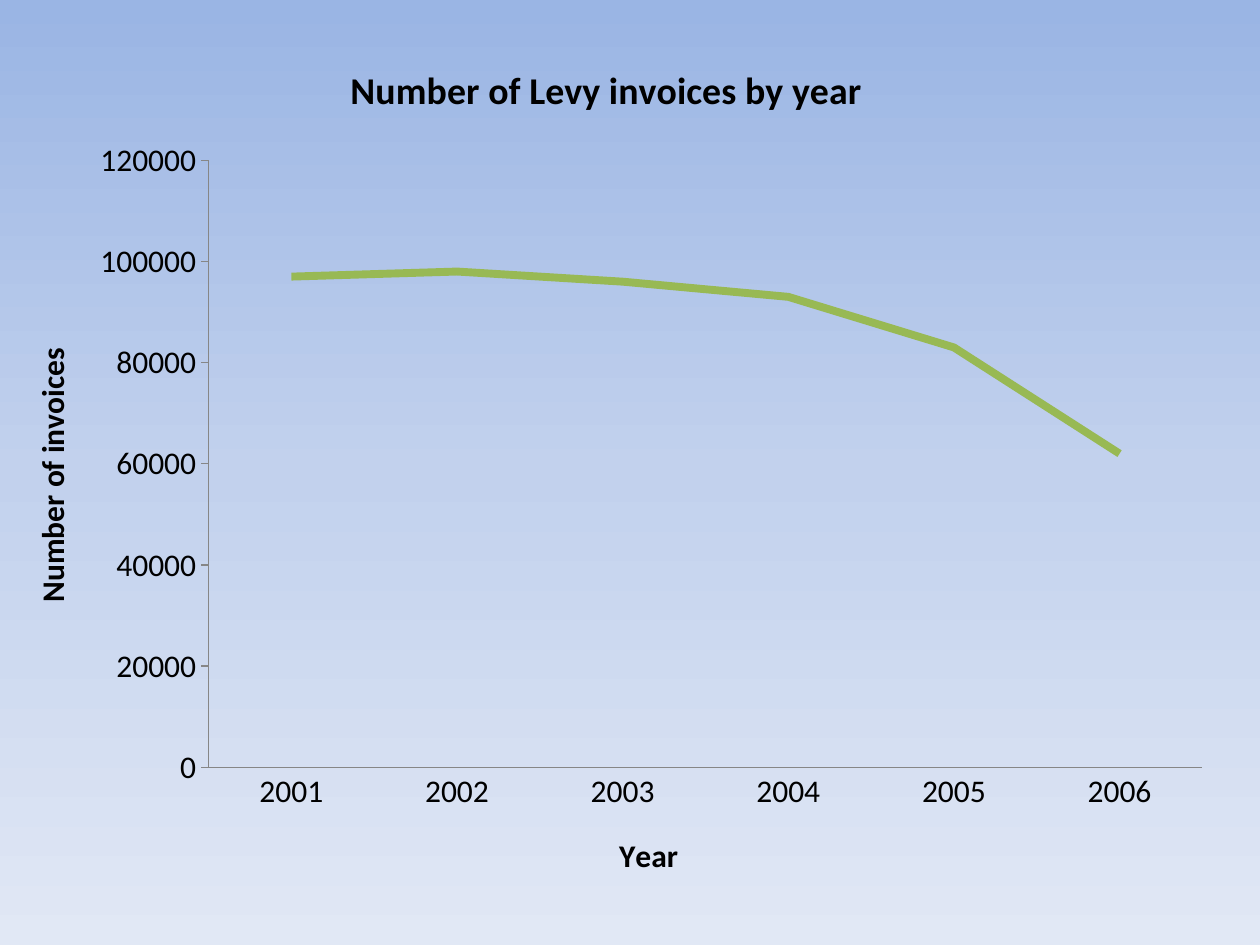
from copy import deepcopy

from lxml import etree
from pptx import Presentation
from pptx.chart.data import CategoryChartData
from pptx.dml.color import RGBColor
from pptx.enum.chart import XL_CHART_TYPE, XL_MARKER_STYLE, XL_TICK_MARK
from pptx.oxml.ns import qn
from pptx.util import Emu, Pt

LINE = XL_CHART_TYPE.LINE
NO_MARKER = XL_MARKER_STYLE.NONE
NO_TICK = XL_TICK_MARK.NONE
OUTSIDE_TICK = XL_TICK_MARK.OUTSIDE

EMU_PER_PX = 914400 / 126
BLANK_LAYOUT = 6


def px(length):
    """Turn pixels into EMU."""
    return Emu(round(length * EMU_PER_PX))


def color(value):
    """Turn a hex string into a colour."""
    return RGBColor.from_string(value)


def place(parent, index, **values):
    """Give a chart part a manual layout in fractions of the chart."""
    for previous in parent.findall(qn("c:layout")):
        parent.remove(previous)
    layout = etree.Element(qn("c:layout"))
    manual = etree.SubElement(layout, qn("c:manualLayout"))
    if "w" in values:
        etree.SubElement(manual, qn("c:layoutTarget")).set("val", "inner")
    for mode in ("xMode", "yMode"):
        etree.SubElement(manual, qn(f"c:{mode}")).set("val", "edge")
    for name, value in values.items():
        etree.SubElement(manual, qn(f"c:{name}")).set("val", str(value))
    parent.insert(index, layout)


class SlideBuilder:
    """Hold the style and the current slide."""

    font = "Calibri"
    text_color = "000000"
    axis_color = "868686"
    text_size = 18
    title_size = 21.6

    def __init__(self, slide):
        self.slide = slide

    def background(self, top, middle, bottom):
        """Fill the background with a vertical three-stop gradient."""
        fill = self.slide.background.fill
        fill.gradient()
        fill.gradient_angle = 270
        first = self.slide.element.find(".//" + qn("a:gs"))
        center = deepcopy(first)
        center.set("pos", "50000")
        first.addnext(center)
        for stop, value in zip(fill.gradient_stops, (top, middle, bottom)):
            stop.color.rgb = color(value)

    def style_font(self, font, size, bold):
        """Apply the slide's type style."""
        font.name = self.font
        font.size = Pt(size)
        font.bold = bold
        font.color.rgb = color(self.text_color)

    def chart_title(self, title, text, size, x, y, rotation=0):
        """Write and place a chart or axis title."""
        title.text_frame.text = text
        self.style_font(title.text_frame.paragraphs[0].font, size, True)
        title.element.find(".//" + qn("a:bodyPr")).set("rot", str(rotation * 60000))
        place(title.element, 1, x=x, y=y)

    def axis(self, axis, tick):
        """Style an axis without gridlines."""
        axis.has_major_gridlines = False
        axis.major_tick_mark = tick
        axis.minor_tick_mark = NO_TICK
        axis.format.line.color.rgb = color(self.axis_color)
        axis.format.line.width = Pt(0.75)

    def line_chart(self, left, top, width, height, categories, values, line_color):
        """Add a single-line chart."""
        data = CategoryChartData()
        data.categories = categories
        data.add_series("Series 1", values)
        frame = self.slide.shapes.add_chart(
            LINE, px(left), px(top), px(width), px(height), data
        )
        chart = frame.chart
        chart.has_legend = False
        self.style_font(chart.font, self.text_size, False)
        self.axis(chart.category_axis, NO_TICK)
        self.axis(chart.value_axis, OUTSIDE_TICK)
        plot = chart.plots[0]
        plot.vary_by_categories = False
        series = plot.series[0]
        series.smooth = False
        series.marker.style = NO_MARKER
        series.format.line.color.rgb = color(line_color)
        series.format.line.width = Pt(4.5)
        return chart


def main():
    """Build the invoice slide."""
    presentation = Presentation()
    presentation.slide_width = px(1260)
    presentation.slide_height = px(945)
    slide = presentation.slides.add_slide(presentation.slide_layouts[BLANK_LAYOUT])
    builder = SlideBuilder(slide)
    builder.background("9AB5E4", "C2D1ED", "E1E8F5")

    chart = builder.line_chart(
        0, 39, 1227, 867,
        [str(year) for year in range(2001, 2007)],
        [97000, 98000, 96000, 93000, 83000, 62000],
        "98B954",
    )
    scale = chart.value_axis
    scale.minimum_scale, scale.maximum_scale, scale.major_unit = 0, 120000, 20000
    scale.tick_labels.number_format = "0"
    scale.tick_labels.number_format_is_linked = False
    place(chart.element.find(".//" + qn("c:plotArea")), 0, x=0.17, y=0.14, w=0.81, h=0.7)

    size = builder.text_size
    builder.chart_title(
        chart.chart_title, "Number of Levy invoices by year ", builder.title_size, 0.28, 0.02
    )
    builder.chart_title(chart.category_axis.axis_title, "Year", size, 0.5, 0.91)
    builder.chart_title(scale.axis_title, "Number of invoices", size, 0.02, 0.35, -90)
    presentation.save("out.pptx")


if __name__ == "__main__":
    main()
